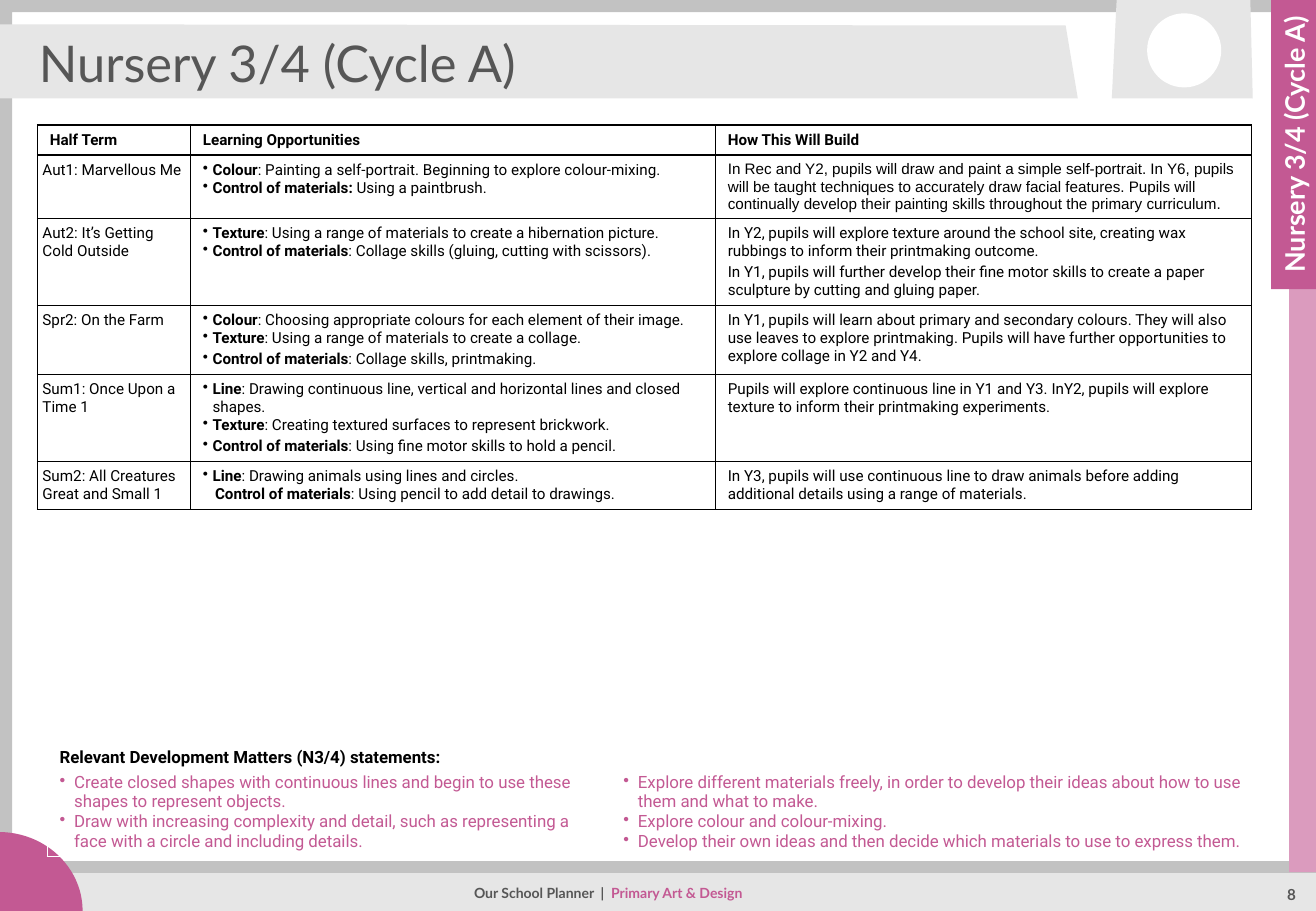
import pptx
import pptx.dml.color
import pptx.enum.shapes
import pptx.enum.text
import pptx.oxml
import pptx.oxml.ns
import pptx.util
from dataclasses import dataclass
from pptx.util import Inches

SHAPES = pptx.enum.shapes.MSO_SHAPE
ALIGN = pptx.enum.text.PP_ALIGN
ANCHOR = pptx.enum.text.MSO_ANCHOR


@dataclass(frozen=True)
class Theme:
    """Colours, fonts and type sizes of the slide."""
    pink: str = "C35993"
    pale_pink: str = "DB9BBE"
    grey: str = "C2C2C2"
    pale_grey: str = "E6E6E6"
    dark_grey: str = "565656"
    black: str = "000000"
    white: str = "FFFFFF"
    heading_font: str = "Lato"
    text_font: str = "Roboto"
    plain_font: str = "Arial"
    title_size: float = 30
    tab_size: float = 16
    statement_size: float = 10
    table_size: float = 9
    footer_size: float = 8.3


THEME = Theme()
TITLE = "Nursery 3/4 (Cycle A)"
HEADINGS = ["Half Term", "Learning Opportunities", "How This Will Build"]
HALF_TERMS = [
    ("Aut1: Marvellous Me",
     [("Colour", ": Painting a self-portrait. Beginning to explore colour-mixing."),
      ("Control of materials:", " Using a paintbrush.")],
     ["In Rec and Y2, pupils will draw and paint a simple self-portrait. In Y6, pupils will be taught techniques "
      "to accurately draw facial features. Pupils will continually develop their painting skills throughout the "
      "primary curriculum."]),
    ("Aut2: It’s Getting Cold Outside",
     [("Texture", ": Using a range of materials to create a hibernation picture."),
      ("Control of materials", ": Collage skills (gluing, cutting with scissors).")],
     ["In Y2, pupils will explore texture around the school site, creating wax rubbings to inform their "
      "printmaking outcome.",
      "In Y1, pupils will further develop their fine motor skills to create a paper sculpture by cutting and "
      "gluing paper."]),
    ("Spr2: On the Farm",
     [("Colour", ": Choosing appropriate colours for each element of their image."),
      ("Texture", ": Using a range of materials to create a collage."),
      ("Control of materials", ": Collage skills, printmaking.")],
     ["In Y1, pupils will learn about primary and secondary colours. They will also use leaves to explore "
      "printmaking. Pupils will have further opportunities to explore collage in Y2 and Y4."]),
    ("Sum1: Once Upon a Time 1",
     [("Line", ": Drawing continuous line, vertical and horizontal lines and closed shapes."),
      ("Texture", ": Creating textured surfaces to represent brickwork."),
      ("Control of materials", ": Using fine motor skills to hold a pencil.")],
     ["Pupils will explore continuous line in Y1 and Y3. InY2, pupils will explore texture to inform their "
      "printmaking experiments."]),
    ("Sum2: All Creatures Great and Small 1",
     [("Line", ": Drawing animals using lines and circles."),
      ("Control of materials", ": Using pencil to add detail to drawings.")],
     ["In Y3, pupils will use continuous line to draw animals before adding additional details using a range of "
      "materials."]),
]
STATEMENTS_HEADING = "Relevant Development Matters (N3/4) statements:"
STATEMENTS = [
    ["Create closed shapes with continuous lines and begin to use these shapes to represent objects.",
     "Draw with increasing complexity and detail, such as representing a face with a circle and including details."],
    ["Explore different materials freely, in order to develop their ideas about how to use them and what to make.",
     "Explore colour and colour-mixing.",
     "Develop their own ideas and then decide which materials to use to express them."],
]


def rgb(colour):
    """Turn a hex string into a colour."""
    return pptx.dml.color.RGBColor.from_string(colour)


def paint(shape, colour):
    """Give a shape a flat fill with no line or shadow."""
    shape.shadow.inherit = False
    shape.fill.solid()
    shape.fill.fore_color.rgb = rgb(colour)
    shape.line.fill.background()


def add_block(page, kind, place, colour):
    """Add a flat preset shape."""
    paint(page.shapes.add_shape(kind, *map(Inches, place)), colour)


def add_outline(page, contours, colour):
    """Add a flat shape made of straight-sided contours."""
    builder = page.shapes.build_freeform(*map(Inches, contours[0][0]), scale=1.0)
    for number, contour in enumerate(contours):
        if number:
            builder.move_to(*map(Inches, contour[0]))
        builder.add_line_segments([tuple(map(Inches, point)) for point in contour[1:]], close=True)
    paint(builder.convert_to_shape(), colour)


def add_rule(page, start, end, colour, width):
    """Add a straight line."""
    rule = page.shapes.add_connector(pptx.enum.shapes.MSO_CONNECTOR.STRAIGHT, *map(Inches, start + end))
    rule.line.color.rgb = rgb(colour)
    rule.line.width = pptx.util.Pt(width)
    rule._element.spPr.append(pptx.oxml.parse_xml(f'<a:effectLst {pptx.oxml.ns.nsdecls("a")}/>'))


def add_span(para, text, size, colour, font=THEME.text_font, bold=False):
    """Add one formatted run."""
    span = para.add_run()
    span.text = text
    span.font.size = pptx.util.Pt(size)
    span.font.name = font
    span.font.bold = bold
    span.font.color.rgb = rgb(colour)


def set_indent(para, indent, bullet=True):
    """Indent a paragraph, with a hanging bullet if wanted."""
    settings = para._p.get_or_add_pPr()
    settings.set("marL", str(Inches(indent)))
    settings.set("indent", str(-Inches(indent) if bullet else 0))
    if bullet:
        settings.append(pptx.oxml.parse_xml(f'<a:buChar {pptx.oxml.ns.nsdecls("a")} char="•"/>'))


def paragraphs(frame, items):
    """Pair each item with its own paragraph of a text frame."""
    for number, item in enumerate(items):
        yield (frame.add_paragraph() if number else frame.paragraphs[0]), item


def format_box(box, place, anchor, align):
    """Place a text box or placeholder and return its first paragraph."""
    box.left, box.top, box.width, box.height = map(Inches, place)
    frame = box.text_frame
    frame.word_wrap = True
    frame.auto_size = pptx.enum.text.MSO_AUTO_SIZE.NONE
    frame.vertical_anchor = anchor
    frame.paragraphs[0].alignment = align
    return frame.paragraphs[0]


def add_box(page, place, anchor=ANCHOR.MIDDLE, turn=0):
    """Add a centred text box and return its first paragraph."""
    box = page.shapes.add_textbox(*map(Inches, place))
    box.rotation = turn
    return format_box(box, place, anchor, ALIGN.CENTER)


def add_grid(page, corner, widths, heights):
    """Add an unfilled, unbanded table."""
    frame = page.shapes.add_table(len(heights), len(widths), *map(Inches, (*corner, sum(widths), sum(heights))))
    table = frame.table
    table.first_row = table.horz_banding = False
    for column, width in zip(table.columns, widths):
        column.width = Inches(width)
    for row, height in zip(table.rows, heights):
        row.height = Inches(height)
    for cell in table.iter_cells():
        cell.fill.background()
    return table


def add_borders(cell, colour):
    """Draw a one-point border around a cell."""
    settings = cell._tc.get_or_add_tcPr()
    for position, side in enumerate(("lnL", "lnR", "lnT", "lnB")):
        settings.insert(position, pptx.oxml.parse_xml(
            f'<a:{side} {pptx.oxml.ns.nsdecls("a")} w="12700"><a:solidFill>'
            f'<a:srgbClr val="{colour}"/></a:solidFill></a:{side}>'))


def add_half_terms(page):
    """Add the table of half terms."""
    table = add_grid(page, (0.31, 1.03), [1.26, 4.32, 4.41], [0.24, 0.52, 0.71, 0.56, 0.71, 0.39])
    size, colour = THEME.table_size, THEME.black
    for cell in table.iter_cells():
        add_borders(cell, colour)
    for column, heading in enumerate(HEADINGS):
        add_span(table.cell(0, column).text_frame.paragraphs[0], heading, size, colour, bold=True)
    for row, (term, opportunities, builds) in enumerate(HALF_TERMS, 1):
        name_cell, learning_cell, build_cell = (table.cell(row, column) for column in range(3))
        name_cell.margin_left = name_cell.margin_right = Inches(0.04)
        add_span(name_cell.text_frame.paragraphs[0], term, size, colour)
        for number, (para, (topic, detail)) in enumerate(paragraphs(learning_cell.text_frame, opportunities)):
            plain = row == len(HALF_TERMS) and number == 1
            set_indent(para, 0.1 if plain else 0.08, bullet=not plain)
            para.space_after = pptx.util.Pt(2 if number else 0)
            add_span(para, topic, size, colour, bold=True)
            add_span(para, detail, size, colour)
        for para, text in paragraphs(build_cell.text_frame, builds):
            para.space_after = pptx.util.Pt(2)
            add_span(para, text, size, colour, THEME.plain_font if row == 1 else THEME.text_font)


def add_statements(page):
    """Add the two columns of development statements."""
    table = add_grid(page, (0.39, 6.16), [4.64, 5.41], [0.2, 0.68])
    for cell in table.iter_cells():
        cell.margin_top, cell.margin_bottom = 0, Inches(0.04)
    table.cell(0, 0).merge(table.cell(0, 1))
    add_span(table.cell(0, 0).text_frame.paragraphs[0], STATEMENTS_HEADING, THEME.statement_size, THEME.black,
             bold=True)
    for column, statements in enumerate(STATEMENTS):
        for para, text in paragraphs(table.cell(1, column).text_frame, statements):
            set_indent(para, 0.12)
            add_span(para, text, THEME.statement_size, THEME.pink)


def add_surround(page):
    """Add the frame, bands and side tab."""
    add_outline(page, [[(0, 0), (10.83, 0), (10.83, 7.5), (0, 7.5)],
                       [(0.1, 0.1), (0.1, 7.41), (10.73, 7.41), (10.73, 0.1)]], THEME.grey)
    add_block(page, SHAPES.RECTANGLE, (0.32, 7.18, 10.51, 0.32), THEME.pale_grey)
    add_rule(page, (0.05, 7.14), (10.83, 7.14), THEME.grey, 7)
    add_block(page, SHAPES.ARC, (-0.7, 6.85, 1.38, 1.3), THEME.pink)
    add_outline(page, [[(0, 0.2), (0, 0.81), (8.87, 0.81), (8.77, 0.21)]], THEME.pale_grey)
    add_block(page, SHAPES.RECTANGLE, (10.61, 0, 0.24, 7.18), THEME.pale_pink)
    add_block(page, SHAPES.RECTANGLE, (10.46, 0, 0.39, 2.38), THEME.pink)
    add_outline(page, [[(9.15, 0.81), (10.31, 0.81), (10.29, 0), (9.19, 0)]], THEME.pale_grey)
    add_block(page, SHAPES.OVAL, (9.44, 0.11, 0.61, 0.61), THEME.white)


def add_labels(page):
    """Add the title, side label, footer and page number."""
    title = format_box(page.shapes.title, (0.22, 0.26, 8.42, 0.5), ANCHOR.MIDDLE, ALIGN.LEFT)
    add_span(title, TITLE, THEME.title_size, THEME.dark_grey, THEME.heading_font)
    page.shapes._spTree.append(page.shapes.title._element)
    tab = add_box(page, (9.46, 1.02, 2.38, 0.34), turn=270)
    add_span(tab, TITLE, THEME.tab_size, THEME.white, THEME.heading_font, True)
    footer = add_box(page, (2.05, 7.21, 5.91, 0.3))
    footer.line_spacing = 0.9
    for text, colour in (("Our School Planner  |  ", THEME.dark_grey), ("Primary Art & Design", THEME.pink)):
        add_span(footer, text, THEME.footer_size, colour, THEME.heading_font, True)
    number = add_box(page, (10.31, 7.21, 0.64, 0.28), ANCHOR.TOP)
    number.line_spacing = 1.2
    add_span(number, "8", THEME.table_size, THEME.dark_grey, THEME.heading_font, True)


def main():
    """Build and save the slide."""
    deck = pptx.Presentation()
    deck.slide_width, deck.slide_height = Inches(10.83), Inches(7.5)
    page = deck.slides.add_slide(deck.slide_layouts[5])
    add_surround(page)
    add_labels(page)
    add_half_terms(page)
    add_statements(page)
    deck.save("out.pptx")


if __name__ == "__main__":
    main()
